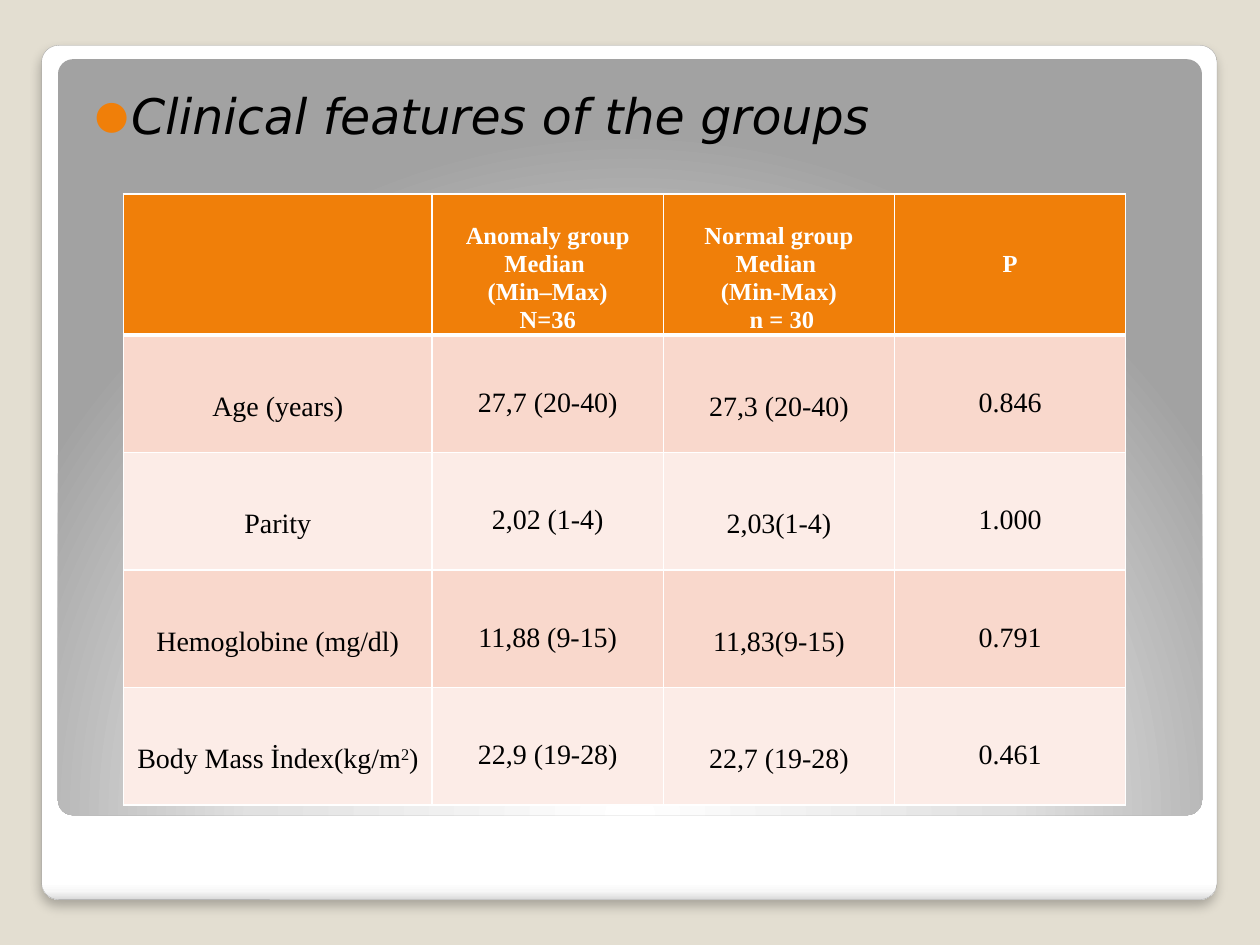
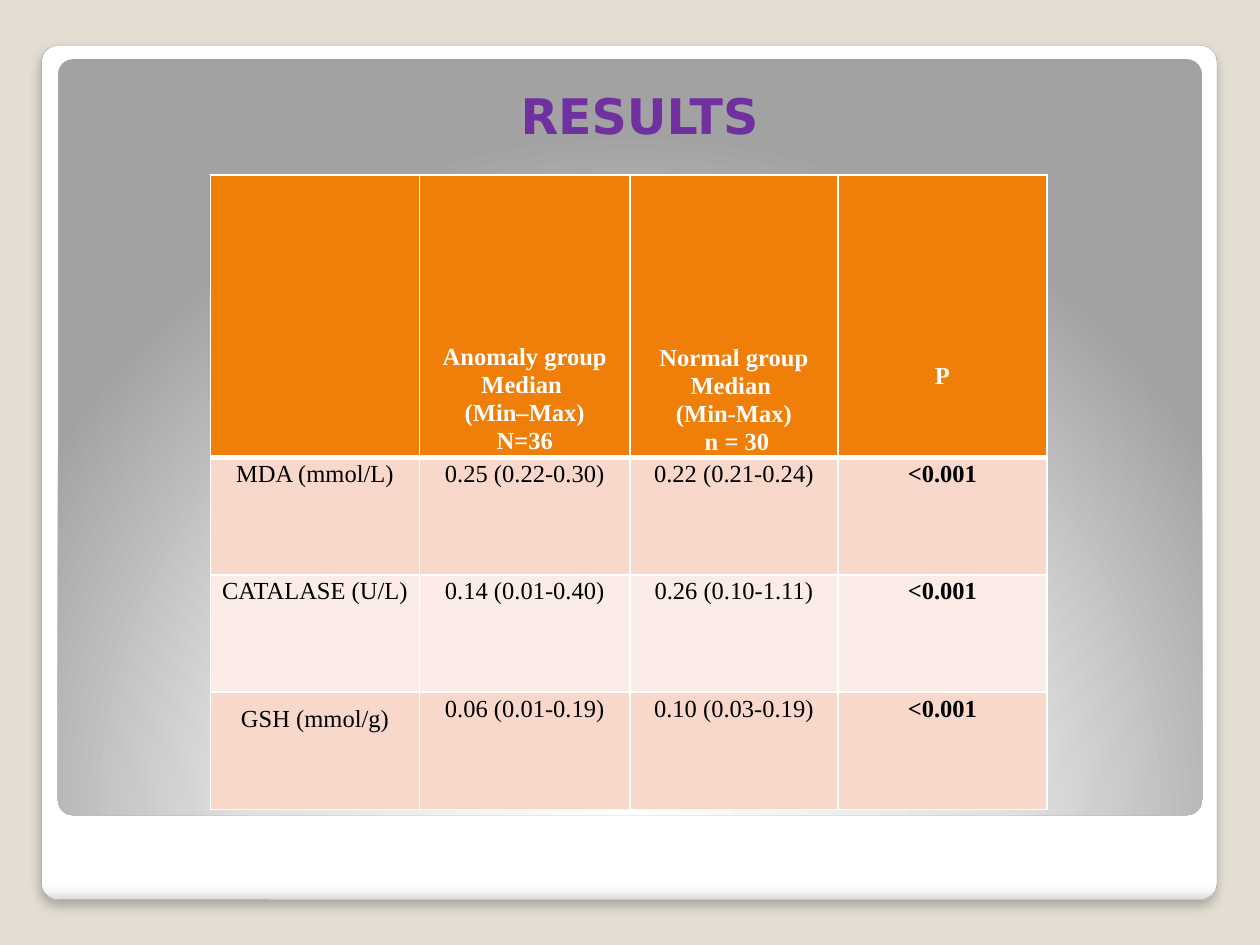
from lxml import etree
from pptx import Presentation, util as u
from pptx.dml.color import RGBColor
from pptx.enum import shapes, text
from pptx.oxml import parse_xml
from pptx.oxml.ns import qn

HUES = {"sand": "E3DED1", "white": "FFFFFF", "edge": "A4A4A4", "black": "000000",
        "orange": "F07F09", "rose": "F9D8CC", "blush": "FCECE7", "purple": "7030A0"}
SANS, SERIF = "DejaVu Sans", "Times New Roman"
SPACE = 'xmlns:a="http://schemas.openxmlformats.org/drawingml/2006/main"'
COLS, ROWS = 100, 75
UNIT = u.Inches(0.1)
LINE = u.Pt(16)


def grid(*sizes):
    """Turn grid steps into lengths."""
    return [int(size * UNIT) for size in sizes]


def hue(name):
    """Look up a colour by name."""
    return RGBColor.from_string(HUES[name])


def style(run, font, size, color, bold=False, slant=False):
    """Format one run."""
    face = run.font
    face.name, face.size, face.bold, face.italic = font, u.Pt(size), bold, slant
    face.color.rgb = hue(color)


def blend(shape, stops, way):
    """Give a shape a gradient of (percent, hex) stops."""
    shape.fill.gradient()
    old = shape.element.spPr.find(qn("a:gradFill"))
    marks = "".join(f'<a:gs pos="{pos * 1000}"><a:srgbClr val="{tint}"/></a:gs>'
                    for pos, tint in stops)
    new = parse_xml(f'<a:gradFill {SPACE} rotWithShape="1"><a:gsLst>{marks}</a:gsLst>{way}</a:gradFill>')
    old.getparent().replace(old, new)


def panel(slide, box, stops, way):
    """Draw a softly rounded gradient panel without a line."""
    shape = slide.shapes.add_shape(shapes.MSO_SHAPE.ROUNDED_RECTANGLE, *grid(*box))
    shape.adjustments[0] = 0.02
    shape.shadow.inherit = False
    shape.line.fill.background()
    blend(shape, stops, way)
    return shape


def frame(deck, slide):
    """Move the background and both panels to the master."""
    master = deck.slide_master
    master.background.fill.solid()
    master.background.fill.fore_color.rgb = hue("sand")
    card = panel(slide, (3.3, 3.6, 93.3, 67.8),
                 [(0, "FFFFFF"), (98, "FFFFFF"), (99, "F7F7F7"), (100, "DADADA")],
                 '<a:lin ang="5400000" scaled="0"/>')
    card.line.color.rgb = hue("edge")
    card.line.width = u.Pt(0.16)
    card.element.spPr.find(qn("a:effectLst")).append(parse_xml(
        f'<a:outerShdw {SPACE} blurRad="76200" dist="50800" dir="5400000" algn="t" rotWithShape="0">'
        '<a:srgbClr val="000000"><a:alpha val="25000"/></a:srgbClr></a:outerShdw>'))
    glow = panel(slide, (4.6, 4.7, 90.8, 60),
                 [(0, "FFFFFF"), (55, "E1E1E1"), (100, "A2A2A2")],
                 '<a:path path="circle"><a:fillToRect l="50000" t="175000" r="50000" b="-75000"/></a:path>')
    for step, shape in enumerate((card, glow)):
        shape.element.nvSpPr.cNvPr.set("id", str(20 + step))
        master.shapes.element.insert(2 + step, shape.element)


def bullet(par):
    """Add an orange hanging bullet."""
    props = par._p.get_or_add_pPr()
    props.set("marL", str(u.Inches(0.29)))
    props.set("indent", str(-u.Inches(0.29)))
    for tag, key, val in (("buSzPct", "val", "80000"), ("buFont", "typeface", SANS),
                          ("buChar", "char", "●")):
        etree.SubElement(props, qn("a:" + tag)).set(key, val)
    tint = etree.Element(qn("a:buClr"))
    etree.SubElement(tint, qn("a:srgbClr")).set("val", HUES["orange"])
    props.find(qn("a:buSzPct")).addprevious(tint)


def head(slide, words, listed):
    """Fill the title, as a slanted bullet or as a bold centred line."""
    title = slide.shapes.title
    title.left, title.top, title.width, title.height = grid(5.5, 5.8, 89.5, 7.3)
    body = title.text_frame
    body.text = words
    body.auto_size = text.MSO_AUTO_SIZE.NONE
    body.vertical_anchor = text.MSO_ANCHOR.TOP
    body.margin_left, body.margin_top, body.margin_right, body.margin_bottom = grid(2, 1, 1, 0.5)
    par = body.paragraphs[0]
    par.space_before = u.Pt(2.5)
    par.alignment = text.PP_ALIGN.LEFT if listed else text.PP_ALIGN.CENTER
    if listed:
        bullet(par)
    style(par.runs[0], SANS, 28, "black" if listed else "purple", not listed, listed)


def edges(cell, top, base):
    """Draw white borders round a cell."""
    props = cell._tc.get_or_add_tcPr()
    for spot, (side, wide) in enumerate((("L", 1), ("R", 1), ("T", top), ("B", base))):
        props.insert(spot, parse_xml(
            f'<a:ln{side} {SPACE} w="{u.Pt(wide)}"><a:solidFill>'
            f'<a:srgbClr val="{HUES["white"]}"/></a:solidFill></a:ln{side}>'))


def write(cell, words, drop, size, top):
    """Set a cell's lines below a drop; parts between bars are raised."""
    cell.margin_left = cell.margin_right = cell.margin_bottom = 0
    cell.margin_top = grid(drop)[0]
    cell.vertical_anchor = text.MSO_ANCHOR.TOP
    cell.text_frame.text = words.replace("|", "")
    for par, line in zip(cell.text_frame.paragraphs, words.split("\n")):
        par.alignment = text.PP_ALIGN.CENTER
        par.line_spacing = LINE
        par.text = ""
        for spot, part in enumerate(line.split("|")):
            if not part:
                continue
            run = par.add_run()
            run.text = part
            style(run, SERIF, size, "white" if top else "black", top or part.startswith("<"))
            if spot % 2:
                run.font._element.set("baseline", "30000")


def chart(slide, spot, cols, rows, data, drops, size):
    """Place a table with an orange head and banded rows."""
    box = grid(*spot, sum(cols), sum(rows))
    table = slide.shapes.add_table(len(rows), len(cols), *box).table
    for col, wide in zip(table.columns, grid(*cols)):
        col.width = wide
    for y, (row, tall) in enumerate(zip(table.rows, grid(*rows))):
        row.height = tall
        for x, cell in enumerate(row.cells):
            top = y == 0
            cell.fill.solid()
            cell.fill.fore_color.rgb = hue("orange" if top else ("blush", "rose")[y % 2])
            edges(cell, 3 if y == 1 else 1, 3 if top else 1)
            write(cell, data[y][x], drops[y][x], 14 if top else size, top)


def main():
    """Build both slides."""
    deck = Presentation()
    deck.slide_width, deck.slide_height = grid(COLS, ROWS)
    first, second = (deck.slides.add_slide(deck.slide_layouts[5]) for _ in range(2))
    frame(deck, first)
    names = ["", "Anomaly group Median \n(Min–Max)\nN=36", "Normal group Median \n(Min-Max)\n n = 30", "P"]

    head(first, "Clinical features of the groups", True)
    chart(first, (9.8, 15.4), [24.5] + [18.35] * 3, [11.2] + [9.32] * 4,
          [names,
           ["Age (years)", "27,7 (20-40)", "27,3 (20-40)", "0.846"],
           ["Parity", "2,02 (1-4)", "2,03(1-4)", "1.000"],
           ["Hemoglobine (mg/dl)", "11,88 (9-15)", "11,83(9-15)", "0.791"],
           ["Body Mass İndex(kg/m|2|)", "22,9 (19-28)", "22,7 (19-28)", "0.461"]],
          [[0, 2.2, 2.2, 4.4]] + [[4.7, 4.4, 4.7, 4.4]] * 4, 16)

    head(second, "RESULTS", False)
    chart(second, (16.7, 13.9), [16.6, 16.7, 16.5, 16.6], [22.4] + [9.32] * 3,
          [names,
           ["MDA (mmol/L)", "0.25 (0.22-0.30)", "0.22 (0.21-0.24)", "<0.001"],
           ["CATALASE (U/L)", "0.14 (0.01-0.40)", "0.26 (0.10-1.11)", "<0.001"],
           ["GSH (mmol/g)", "0.06 (0.01-0.19)", "0.10 (0.03-0.19)", "<0.001"]],
          [[0, 13.3, 13.4, 14.8]] + [[0.2] * 4] * 2 + [[1, 0.2, 0.2, 0.2]], 14)
    deck.save("out.pptx")


if __name__ == "__main__":
    main()
